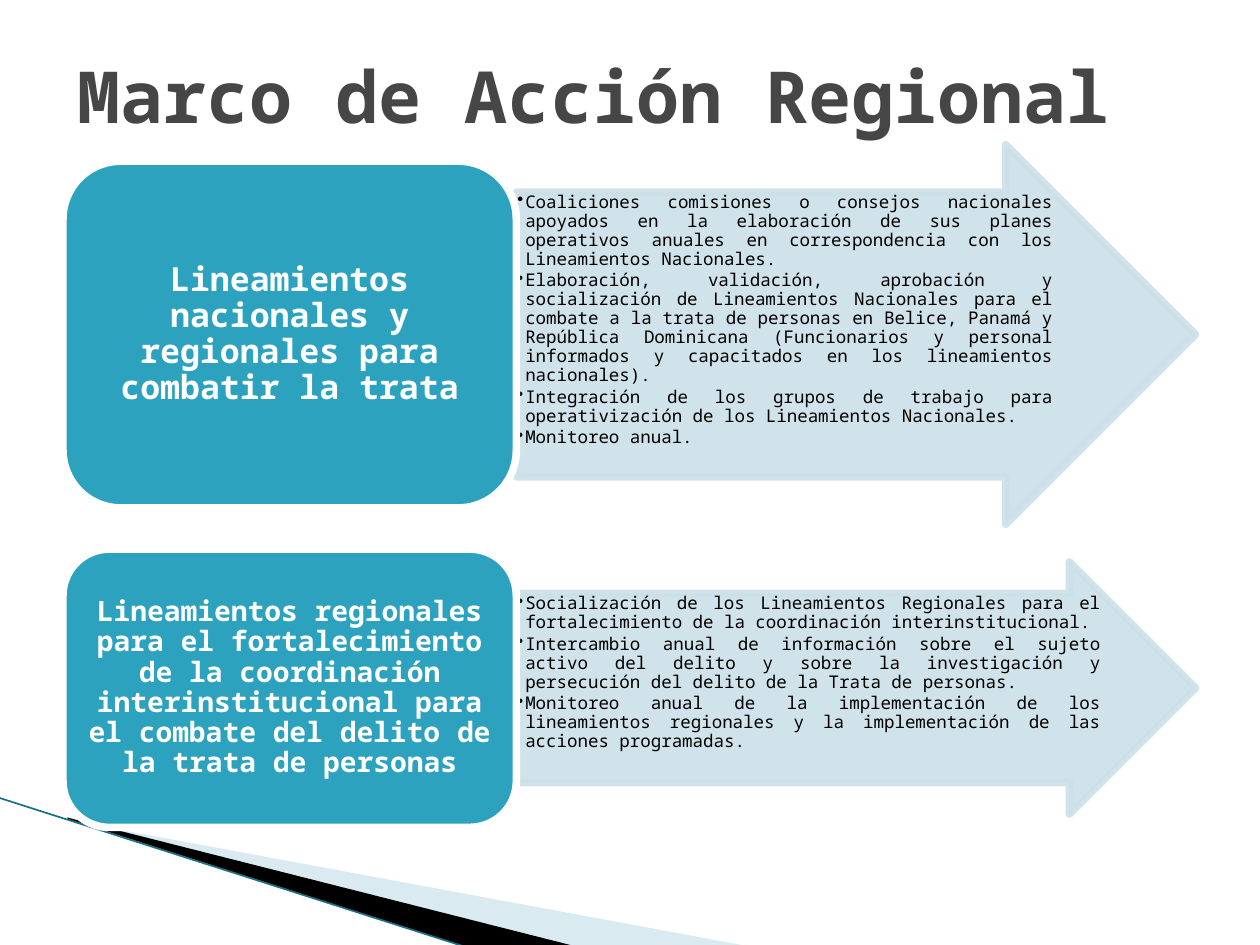
from lxml import etree
from pptx import Presentation
from pptx.dml.color import RGBColor
from pptx.enum import shapes, text
from pptx.oxml import ns
from pptx.util import Cm, Pt

FONT = "Noto Sans Mono"
TEAL, PALE, WHITE, BLACK, GREY = "2DA2BF", "CDE0E8", "FFFFFF", "000000", "464646"
BORDER = 4.33

TITLE = "Marco de Acción Regional"
# Places in cm: top and height of the box and of its arrow
ROWS = [
    dict(
        heading="Lineamientos nacionales y regionales para combatir la trata",
        size=19, box=(3.25, 6.99), arrow=(2.92, 7.65),
        points=[
            "Coaliciones comisiones o consejos nacionales apoyados en la elaboración de sus planes "
            "operativos anuales en correspondencia con los Lineamientos Nacionales.",
            "Elaboración, validación, aprobación y socialización de Lineamientos Nacionales para el "
            "combate a la trata de personas en Belice, Panamá y República Dominicana (Funcionarios y "
            "personal informados y capacitados en los lineamientos nacionales).",
            "Integración de los grupos de trabajo para operativización de los Lineamientos Nacionales.",
            "Monitoreo anual.",
        ],
    ),
    dict(
        heading="Lineamientos regionales para el fortalecimiento de la coordinación "
                "interinstitucional para el combate del delito de la trata de personas",
        size=16, box=(11.07, 5.61), arrow=(11.33, 5.08),
        points=[
            "Socialización de los Lineamientos Regionales para el fortalecimiento de la coordinación "
            "interinstitucional.",
            "Intercambio anual de información sobre el sujeto activo del delito y sobre la "
            "investigación y persecución del delito de la Trata de personas.",
            "Monitoreo anual de la implementación de los lineamientos regionales y la implementación "
            "de las acciones programadas.",
        ],
    ),
]
BOX_LEFT, BOX_WIDTH = 1.27, 9.14
ARROW_LEFT, ARROW_WIDTH = BOX_LEFT + BOX_WIDTH, 13.69
SHAFT, HEAD = 0.75, 0.5

# Corner wedges: points in cm, colour, opacity in percent
WEDGES = [
    ([(1.4, 16.54), (15.11, 19.08), (11.58, 19.08), (1.4, 16.51)], "A0CBDC", 40),
    ([(1.35, 16.48), (11.61, 19.08), (9.45, 19.1), (1.37, 16.51)], BLACK, 100),
]
EDGE = [(-0.03, 16.08), (9.42, 19.1)]


def rgb(value):
    return RGBColor.from_string(value)


def set_opacity(fill_parent, percent):
    color = fill_parent.find(".//" + ns.qn("a:srgbClr"))
    etree.SubElement(color, ns.qn("a:alpha"), val=str(percent * 1000))


def paint(sp, color, opacity=100, line=None):
    sp.shadow.inherit = False
    sp.fill.solid()
    sp.fill.fore_color.rgb = rgb(color)
    if line:
        sp.line.color.rgb = rgb(line)
        sp.line.width = Pt(BORDER)
        etree.SubElement(sp.line._get_or_add_ln(), ns.qn("a:round"))
    else:
        sp.line.fill.background()
    if opacity < 100:
        set_opacity(sp._element.spPr.find(ns.qn("a:solidFill")), opacity)
        if line:
            set_opacity(sp.line._get_or_add_ln(), opacity)


def write(tf, paragraphs, size, color, bold=False, align=None, anchor=None,
          insets=None, spacing=None, after=0, bullet=None):
    """Fill a text frame; insets are (horizontal, vertical) and bullet is the indent, in cm."""
    tf.word_wrap = True
    tf.auto_size = text.MSO_AUTO_SIZE.NONE
    tf.vertical_anchor = anchor
    if insets:
        tf.margin_left = tf.margin_right = Cm(insets[0])
        tf.margin_top = tf.margin_bottom = Cm(insets[1])
    for i, content in enumerate(paragraphs):
        p = tf.add_paragraph() if i else tf.paragraphs[0]
        p.alignment = align
        p.line_spacing = spacing
        p.space_before, p.space_after = Pt(0), Pt(after)
        if bullet:
            pPr = p._p.get_or_add_pPr()
            pPr.set("marL", str(Cm(bullet)))
            pPr.set("indent", str(-Cm(bullet)))
            etree.SubElement(pPr, ns.qn("a:buChar"), char="•")
        r = p.add_run()
        r.text = content
        r.font.name, r.font.size, r.font.bold = FONT, Pt(size), bold
        r.font.color.rgb = rgb(color)


def add_corner(s):
    for points, color, opacity in WEDGES:
        start, *rest = [(Cm(x), Cm(y)) for x, y in points]
        builder = s.shapes.build_freeform(*start)
        builder.add_line_segments(rest, close=True)
        paint(builder.convert_to_shape(), color, opacity)
    (x1, y1), (x2, y2) = EDGE
    edge = s.shapes.add_connector(shapes.MSO_CONNECTOR.STRAIGHT, Cm(x1), Cm(y1), Cm(x2), Cm(y2))
    edge.line.color.rgb = rgb("1B6F82")
    edge.line.width = Pt(0.95)
    etree.SubElement(edge._element.spPr, ns.qn("a:effectLst"))


def add_row(s, row):
    top, height = row["arrow"]
    arrow = s.shapes.add_shape(shapes.MSO_SHAPE.RIGHT_ARROW, Cm(ARROW_LEFT), Cm(top),
                               Cm(ARROW_WIDTH), Cm(height))
    arrow.adjustments[0], arrow.adjustments[1] = SHAFT, HEAD
    paint(arrow, PALE, 90, line=PALE)

    # The points keep to the shaft and the part of the head as tall as it
    body = s.shapes.add_textbox(Cm(ARROW_LEFT), Cm(top + height * (1 - SHAFT) / 2),
                                Cm(ARROW_WIDTH - height * HEAD * SHAFT), Cm(height * SHAFT))
    write(body.text_frame, row["points"], 10, BLACK, align=text.PP_ALIGN.JUSTIFY,
          anchor=text.MSO_ANCHOR.TOP, insets=(0.02, 0.02), spacing=0.9, after=1.5, bullet=0.16)

    top, height = row["box"]
    box = s.shapes.add_shape(shapes.MSO_SHAPE.ROUNDED_RECTANGLE, Cm(BOX_LEFT), Cm(top),
                             Cm(BOX_WIDTH), Cm(height))
    paint(box, TEAL, line=WHITE)
    write(box.text_frame, [row["heading"]], row["size"], WHITE, bold=True,
          align=text.PP_ALIGN.CENTER, anchor=text.MSO_ANCHOR.MIDDLE, insets=(0.19, 0.09),
          spacing=0.9)


def main():
    prs = Presentation()
    prs.slide_width, prs.slide_height = Cm(25.4), Cm(19.05)
    s = prs.slides.add_slide(prs.slide_layouts[5])
    title = s.shapes.title
    title.left, title.top, title.width, title.height = Cm(1.3), Cm(0.33), Cm(22.86), Cm(3.18)
    write(title.text_frame, [TITLE], 41, GREY, bold=True, align=text.PP_ALIGN.LEFT,
          anchor=text.MSO_ANCHOR.MIDDLE)
    add_corner(s)
    for row in ROWS:
        add_row(s, row)
    prs.save("out.pptx")


if __name__ == "__main__":
    main()
